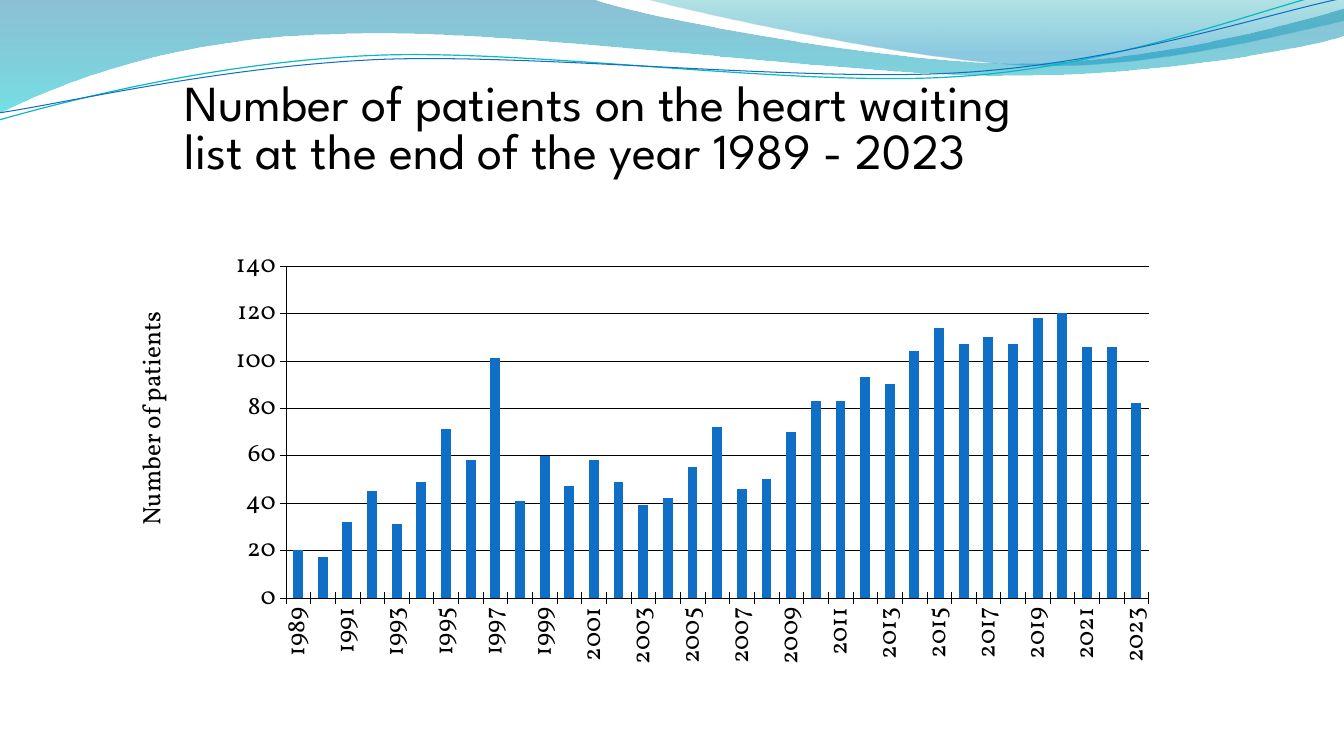
"""Build the heart waiting list slide with its wave header and column chart."""
from dataclasses import dataclass
from typing import Any

import lxml.etree
import pptx
import pptx.chart.data
import pptx.dml.color
import pptx.enum.chart
import pptx.enum.text
import pptx.oxml.ns
import pptx.util

Inches = pptx.util.Inches
Pt = pptx.util.Pt
RGBColor = pptx.dml.color.RGBColor
qn = pptx.oxml.ns.qn

BLACK = RGBColor(0x00, 0x00, 0x00)
BLUE = RGBColor(0x0F, 0x6F, 0xC6)
TEAL = RGBColor(0x0A, 0xB8, 0xBF)
DEEP_BLUE = RGBColor(0x00, 0x74, 0xA1)
AQUA = RGBColor(0x00, 0xC6, 0xCF)
SEA_GREEN = RGBColor(0x00, 0xA1, 0xA9)
SKY = RGBColor(0x00, 0x8B, 0xBF)

TITLE_FONT = "League Spartan"
CHART_FONT = "Vollkorn"
FIRST_YEAR = 1989
PATIENTS = (
    20, 17, 32, 45, 31, 49, 71, 58, 101, 41, 60, 47, 58, 49, 39, 42, 55, 72,
    46, 50, 70, 83, 83, 93, 90, 104, 114, 107, 110, 107, 118, 120, 106, 106, 82,
)

Point = tuple[float, float]


@dataclass
class Stop:
    position: float
    color: RGBColor
    opacity: int


@dataclass
class Band:
    start: Point
    segments: list[tuple[Point, ...]]
    stops: tuple[Stop, Stop]


@dataclass
class Wave:
    start: Point
    segments: list[tuple[Point, ...]]
    color: RGBColor
    width: float


BANDS = [
    Band((0, 0), [
        ((5.87, -0.01),),
        ((6.34, 0.17), (8.84, 0.63), (10.11, 0.63)),
        ((11.37, 0.63), (12.77, 0.26), (13.33, 0.09)),
        ((13.34, 0.36),),
        ((13.11, 0.44), (11.59, 0.76), (9.94, 0.75)),
        ((8.29, 0.75), (5.09, 0.28), (3.43, 0.34)),
        ((1.72, 0.36), (0.61, 0.83), (-0.02, 1.13)),
    ], (Stop(0, DEEP_BLUE, 45), Stop(1, AQUA, 55))),
    Band((6.38, -0.01), [
        ((6.79, 0.11), (9.09, 0.62), (10.25, 0.65)),
        ((11.4, 0.69), (12.82, 0.32), (13.33, 0.21)),
        ((13.33, 0),),
    ], (Stop(0, SEA_GREEN, 30), Stop(0.8, SKY, 45))),
]
WAVES = [
    Wave((-0.01, 1.19), [
        ((0.63, 1.01), (2.1, 0.62), (3.69, 0.55)),
        ((5.27, 0.48), (7.89, 0.87), (9.49, 0.76)),
        ((11.1, 0.66), (12.51, 0.08), (13.3, -0.1)),
    ], TEAL, 0.85),
    Wave((-0.01, 1.12), [
        ((0.62, 1.03), (2.18, 0.66), (3.77, 0.59)),
        ((5.37, 0.53), (7.96, 0.82), (9.55, 0.72)),
        ((11.14, 0.62), (12.55, 0.14), (13.33, -0.02)),
    ], BLUE, 0.75),
]


def add_outline(s: Any, item: Band | Wave, close: bool) -> Any:
    builder = s.shapes.build_freeform(*map(Inches, item.start))
    ends = [(Inches(x), Inches(y)) for x, y in (segment[-1] for segment in item.segments)]
    builder.add_line_segments(ends, close=close)
    sp = builder.convert_to_shape()
    sp.shadow.inherit = False
    edges = list(sp._element.spPr.iter(qn("a:lnTo")))
    for edge, segment in zip(edges, item.segments):
        if len(segment) == 3:
            curve = lxml.etree.Element(qn("a:cubicBezTo"))
            for x, y in segment:
                pt = lxml.etree.SubElement(curve, qn("a:pt"))
                pt.set("x", str(Inches(x) - sp.left))
                pt.set("y", str(Inches(y) - sp.top))
            edge.getparent().replace(edge, curve)
    return sp


def add_band(s: Any, band: Band) -> None:
    sp = add_outline(s, band, True)
    sp.line.fill.background()
    sp.fill.gradient()
    sp.fill.gradient_angle = 270
    for stop, spot in zip(sp.fill.gradient_stops, band.stops):
        stop.position = spot.position
        stop.color.rgb = spot.color
    for color, spot in zip(sp._element.spPr.iter(qn("a:srgbClr")), band.stops):
        lxml.etree.SubElement(color, qn("a:alpha")).set("val", str(spot.opacity * 1000))


def add_wave(s: Any, wave: Wave) -> None:
    sp = add_outline(s, wave, False)
    sp.fill.background()
    sp.line.color.rgb = wave.color
    sp.line.width = Pt(wave.width)


def add_title(s: Any) -> None:
    sp = s.shapes.title
    s.shapes._spTree.append(sp._element)
    sp.left, sp.top, sp.width, sp.height = map(Inches, (1.73, 0.77, 8.41, 1.25))
    tf = sp.text_frame
    tf.word_wrap = True
    tf.auto_size = pptx.enum.text.MSO_AUTO_SIZE.NONE
    tf.vertical_anchor = pptx.enum.text.MSO_ANCHOR.TOP
    p = tf.paragraphs[0]
    p.alignment = pptx.enum.text.PP_ALIGN.LEFT
    p.line_spacing = 0.8
    r = p.add_run()
    r.text = "Number of patients on the heart waiting list at the end of the year 1989 - 2023"
    style_font(r.font, TITLE_FONT, 36)


def style_font(font: Any, name: str, size: float) -> None:
    font.name = name
    font.size = Pt(size)
    font.bold = False
    font.color.rgb = BLACK


def set_layout(parent: Any, index: int, **values: Any) -> None:
    for old in parent.findall(qn("c:layout")):
        parent.remove(old)
    layout = lxml.etree.Element(qn("c:layout"))
    manual = lxml.etree.SubElement(layout, qn("c:manualLayout"))
    for tag, value in values.items():
        lxml.etree.SubElement(manual, qn(f"c:{tag}")).set("val", str(value))
    parent.insert(index, layout)


def style_line(line: Any) -> None:
    line.color.rgb = BLACK
    line.width = Pt(0.25)


def add_patient_chart(s: Any) -> None:
    data = pptx.chart.data.CategoryChartData()
    data.categories = [str(FIRST_YEAR + i) for i in range(len(PATIENTS))]
    data.add_series("Series 1", PATIENTS)
    box = map(Inches, (0.94, 2.24, 11.55, 4.8))
    kind = pptx.enum.chart.XL_CHART_TYPE.COLUMN_STACKED
    chart = s.shapes.add_chart(kind, *box, data).chart
    chart.has_legend = chart.has_title = False
    style_font(chart.font, CHART_FONT, 18)
    plot = chart.plots[0]
    plot.gap_width, plot.overlap, plot.vary_by_categories = 150, 100, False
    fill = plot.series[0].format.fill
    fill.solid()
    fill.fore_color.rgb = BLUE
    years, counts = chart.category_axis, chart.value_axis
    for axis in (years, counts):
        axis.major_tick_mark = pptx.enum.chart.XL_TICK_MARK.CROSS
        style_line(axis.format.line)
        style_font(axis.tick_labels.font, CHART_FONT, 18)
    years._element.find(qn("c:txPr")).find(qn("a:bodyPr")).set("rot", "-5400000")
    skip = lxml.etree.Element(qn("c:tickLblSkip"))
    skip.set("val", "2")
    years._element.find(qn("c:noMultiLvlLbl")).addprevious(skip)
    counts.minimum_scale, counts.maximum_scale, counts.major_unit = 0, 140, 20
    counts.has_major_gridlines = True
    style_line(counts.major_gridlines.format.line)
    tf = counts.axis_title.text_frame
    r = tf.paragraphs[0].add_run()
    r.text = "Number of patients"
    style_font(r.font, CHART_FONT, 18)
    tf._txBody.find(qn("a:bodyPr")).set("rot", "-5400000")
    set_layout(counts.axis_title._element, 1, xMode="edge", yMode="edge", x=0.029, y=0.169)
    set_layout(chart._chartSpace.chart.plotArea, 0, layoutTarget="inner", xMode="edge",
               yMode="edge", x=0.164, y=0.083, w=0.741, h=0.686)


def main() -> None:
    prs = pptx.Presentation()
    prs.slide_width, prs.slide_height = Inches(13.33), Inches(7.5)
    s = prs.slides.add_slide(prs.slide_layouts[5])
    for band in BANDS:
        add_band(s, band)
    for wave in WAVES:
        add_wave(s, wave)
    add_title(s)
    add_patient_chart(s)
    prs.save("out.pptx")


if __name__ == "__main__":
    main()
